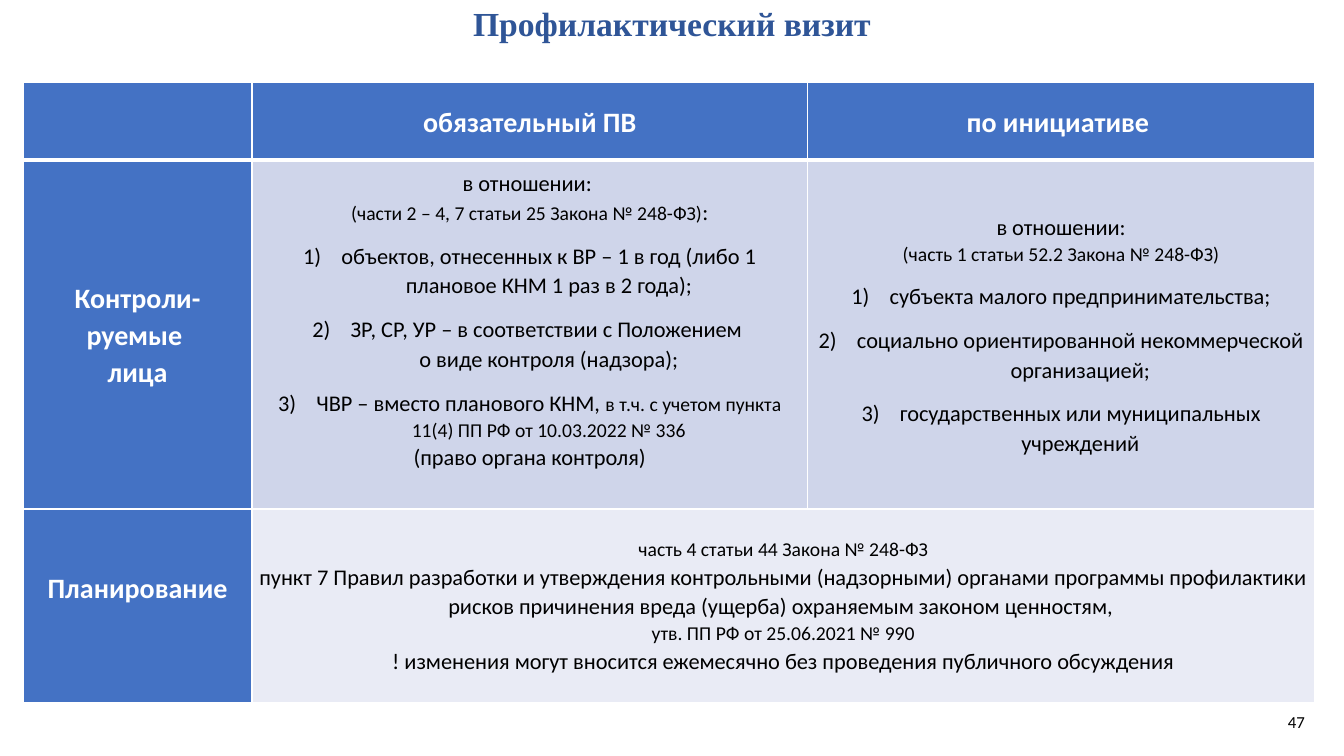
from lxml.etree import SubElement
from pptx import Presentation
from pptx.dml.color import RGBColor
from pptx.enum.text import MSO_ANCHOR, PP_ALIGN
from pptx.oxml import parse_xml
from pptx.oxml.ns import nsdecls, qn
from pptx.util import Inches, Pt

BLUE, LIGHT, PALE = "4472C4", "CFD5EA", "E9EBF5"
WHITE, BLACK, NAVY = "FFFFFF", "000000", "2F5597"
COLS = [2.27, 5.51, 5.03]
ROWS = [0.77, 3.46, 1.92]

# A paragraph is (kind, runs); a run is (text, size).
# Kinds: "p" plain, "n" numbered item.
HEADERS = ["", "обязательный ПВ", "по инициативе "]
SIDE = [["Контроли-руемые ", "лица"], ["Планирование"]]
MANDATORY = [
    ("p", [("в отношении: ", 16)]),
    ("p", [("(части 2 – 4, 7 статьи 25 Закона № 248-ФЗ)", 14), (":", 16)]),
    ("n", [("объектов, отнесенных к ВР – 1 в год (либо 1 плановое КНМ 1 раз в 2 года);", 16)]),
    ("n", [("ЗР, СР, УР – в соответствии с Положением \nо виде контроля (надзора);", 16)]),
    ("n", [("ЧВР – вместо планового КНМ, ", 16),
           ("в т.ч. с учетом пункта 11(4) ПП РФ от 10.03.2022 № 336", 14)]),
    ("p", [("(право органа контроля)", 16)]),
]
INITIATIVE = [
    ("p", [("в отношении:", 16)]),
    ("p", [("(часть 1 статьи 52.2 Закона № 248-ФЗ)", 14)]),
    ("n", [("субъекта малого предпринимательства;", 16)]),
    ("n", [("социально ориентированной некоммерческой организацией;", 16)]),
    ("n", [("государственных или муниципальных учреждений", 16)]),
]
PLANNING = [
    ("p", [("часть 4 статьи 44 Закона № 248-ФЗ", 14)]),
    ("p", [("пункт 7 Правил разработки и утверждения контрольными (надзорными) органами "
            "программы профилактики рисков причинения вреда (ущерба) охраняемым законом "
            "ценностям, ", 16)]),
    ("p", [("утв. ПП РФ от 25.06.2021 № 990", 14)]),
    ("p", [("! изменения могут вносится ежемесячно без проведения публичного обсуждения", 16)]),
]


def rgb(value):
    return RGBColor.from_string(value)


def add_run(p, text, size, color, bold=False, font="Calibri"):
    """Add text to a paragraph, turning newlines into line breaks."""
    for i, line in enumerate(text.split("\n")):
        if i:
            p.add_line_break()
        r = p.add_run()
        r.text = line
        r.font.size, r.font.bold, r.font.name = Pt(size), bold, font
        r.font.color.rgb = rgb(color)


def add_number(p):
    """Number a paragraph as 1), 2), 3) with a hanging indent."""
    p.space_before = Pt(10.5)
    pPr = p._p.get_or_add_pPr()
    pPr.set("marL", str(Inches(0.38)))
    pPr.set("indent", str(-Inches(0.38)))
    SubElement(pPr, qn("a:buFont"), typeface="+mj-lt")
    SubElement(pPr, qn("a:buAutoNum"), type="arabicParenR")


def add_borders(cell, bottom):
    tcPr = cell._tc.get_or_add_tcPr()
    for i, (side, width) in enumerate([("L", 1), ("R", 1), ("T", 1), ("B", bottom)]):
        tcPr.insert(i, parse_xml(
            f'<a:ln{side} {nsdecls("a")} w="{Pt(width)}"><a:solidFill>'
            f'<a:srgbClr val="{WHITE}"/></a:solidFill></a:ln{side}>'))


def fill_cell(cell, paragraphs, fill, color=BLACK, bold=False, bottom=0):
    cell.fill.solid()
    cell.fill.fore_color.rgb = rgb(fill)
    cell.vertical_anchor = MSO_ANCHOR.MIDDLE
    cell.margin_left = cell.margin_right = Inches(0.07)
    cell.margin_top, cell.margin_bottom = 0, Inches(bottom)
    tf = cell.text_frame
    for i, (kind, runs) in enumerate(paragraphs):
        p = tf.add_paragraph() if i else tf.paragraphs[0]
        p.alignment, p.line_spacing = PP_ALIGN.CENTER, 1.07
        if kind == "n":
            add_number(p)
        for text, size in runs:
            add_run(p, text, size, color, bold)


def heading(lines):
    return [("p", [(line, 20)]) for line in lines if line]


def add_text(s, box, text, size, color, align, anchor, **style):
    tf = s.shapes.add_textbox(*map(Inches, box)).text_frame
    tf.word_wrap, tf.vertical_anchor = True, anchor
    tf.margin_top = tf.margin_bottom = 0
    p = tf.paragraphs[0]
    p.alignment, p.line_spacing = align, 0.9
    add_run(p, text, size, color, **style)


def main():
    prs = Presentation()
    prs.slide_width, prs.slide_height = Inches(13.33), Inches(7.5)
    s = prs.slides.add_slide(prs.slide_layouts[6])

    add_text(s, (0, 0.07, 13.33, 0.59), "Профилактический визит", 24, NAVY,
             PP_ALIGN.CENTER, MSO_ANCHOR.TOP, bold=True, font="Times New Roman")
    add_text(s, (12.29, 6.97, 0.75, 0.4), "47", 12, BLACK,
             PP_ALIGN.RIGHT, MSO_ANCHOR.MIDDLE)

    table = s.shapes.add_table(len(ROWS), len(COLS), Inches(0.23), Inches(0.82),
                               Inches(sum(COLS)), Inches(sum(ROWS))).table
    for column, width in zip(table.columns, COLS):
        column.width = Inches(width)
    for row, height in zip(table.rows, ROWS):
        row.height = Inches(height)
    table.cell(2, 1).merge(table.cell(2, 2))

    for c, text in enumerate(HEADERS):
        fill_cell(table.cell(0, c), heading([text]), BLUE, WHITE, True)
    for r, (lines, bottom) in enumerate(zip(SIDE, (0, 0.36)), start=1):
        fill_cell(table.cell(r, 0), heading(lines), BLUE, WHITE, True, bottom)
    fill_cell(table.cell(1, 1), MANDATORY, LIGHT, bottom=0.29)
    fill_cell(table.cell(1, 2), INITIATIVE, LIGHT)
    fill_cell(table.cell(2, 1), PLANNING, PALE)
    for r in range(len(ROWS)):
        for c in range(len(COLS)):
            add_borders(table.cell(r, c), 1 if r else 3)

    prs.save("out.pptx")


if __name__ == "__main__":
    main()
